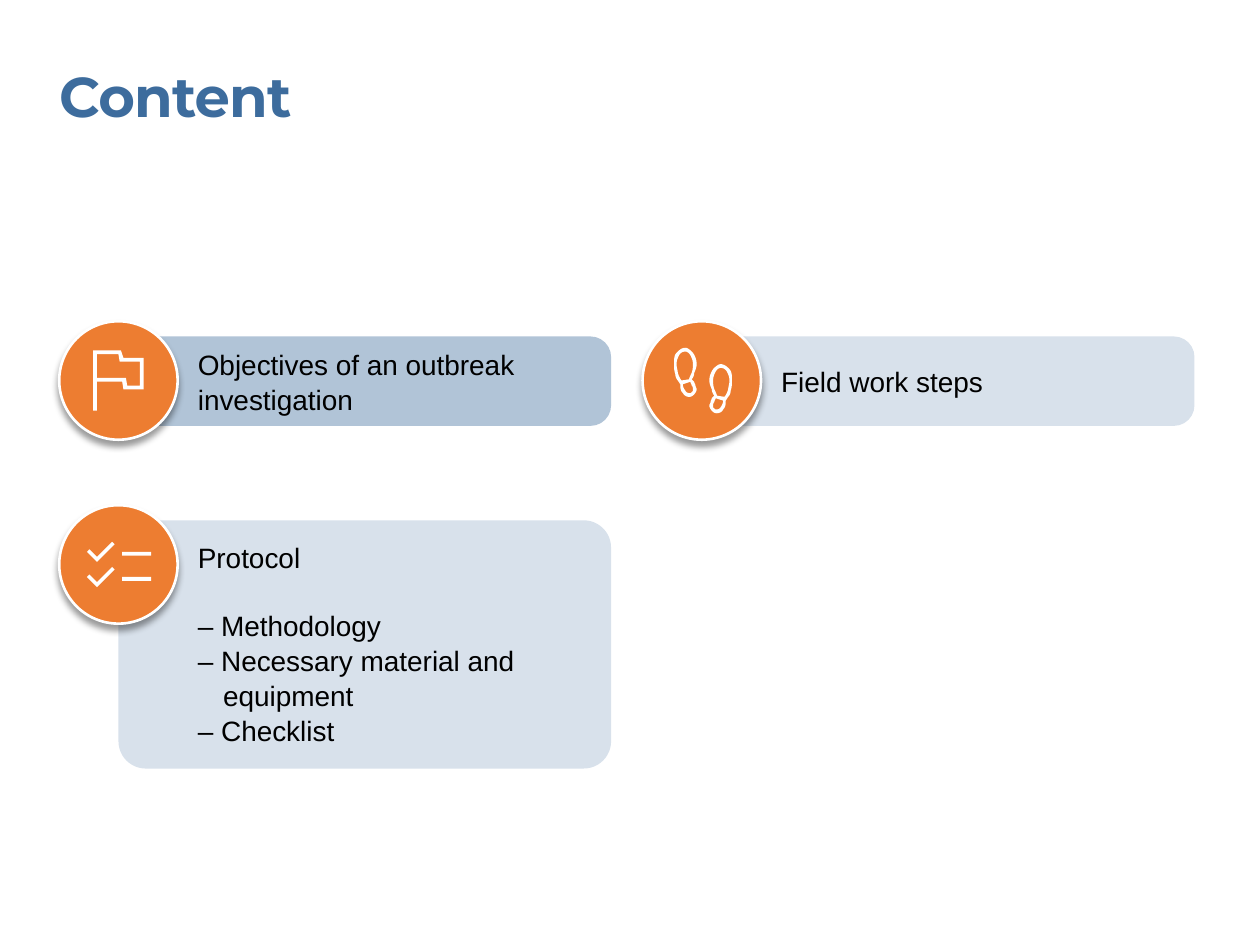
from lxml.etree import SubElement
from pptx import Presentation
from pptx.dml.color import RGBColor
from pptx.enum.shapes import MSO_SHAPE
from pptx.oxml.ns import qn
from pptx.util import Inches, Pt

BLUE, ORANGE, WHITE, BLACK = "3D6C9D", "ED7D31", "FFFFFF", "000000"
DISC = 0.94
FLAG = [
    [(0.74, 3.26), (0.74, 2.78), (0.96, 2.78), (0.98, 2.84), (1.14, 2.84), (1.14, 3.09),
     (0.98, 3.09), (0.97, 3.03), (0.77, 3.03), (0.77, 3.26)],
    [(1.01, 3.06), (1.11, 3.06), (1.11, 2.87), (0.95, 2.87), (0.94, 2.81), (0.77, 2.81),
     (0.77, 3), (1, 3)],
]
TICK = [(0.77, 4.46), (0.69, 4.38), (0.71, 4.36), (0.77, 4.42), (0.89, 4.3), (0.91, 4.32)]
DASH = [(0.97, 4.41), (0.97, 4.38), (1.2, 4.38), (1.2, 4.41)]
FOOT = [
    [(5.47, 3.15), (5.45, 3.15, 5.43, 3.14, 5.42, 3.12), (5.4, 3.1, 5.4, 3.08, 5.4, 3.05),
     (5.38, 3.02), (5.37, 3.01, 5.36, 2.99, 5.36, 2.97), (5.35, 2.94, 5.35, 2.92, 5.35, 2.89),
     (5.35, 2.85, 5.35, 2.82, 5.37, 2.8), (5.39, 2.78, 5.41, 2.76, 5.44, 2.76),
     (5.46, 2.76, 5.48, 2.78, 5.5, 2.8), (5.52, 2.83, 5.53, 2.86, 5.53, 2.89),
     (5.53, 2.91, 5.52, 2.94, 5.51, 2.96), (5.51, 2.98, 5.5, 3, 5.49, 3.01), (5.51, 3.03),
     (5.51, 3.04, 5.52, 3.05, 5.52, 3.06), (5.52, 3.07, 5.53, 3.08, 5.53, 3.09),
     (5.53, 3.1, 5.52, 3.12, 5.51, 3.13), (5.5, 3.14, 5.49, 3.15, 5.47, 3.15)],
    [(5.41, 3.02), (5.47, 3.01), (5.47, 3, 5.48, 2.98, 5.49, 2.96),
     (5.5, 2.93, 5.5, 2.91, 5.5, 2.89), (5.5, 2.86, 5.49, 2.84, 5.48, 2.82),
     (5.47, 2.8, 5.45, 2.79, 5.44, 2.79), (5.42, 2.79, 5.4, 2.8, 5.39, 2.82),
     (5.38, 2.84, 5.37, 2.86, 5.37, 2.89), (5.37, 2.92, 5.38, 2.94, 5.38, 2.96),
     (5.39, 2.99, 5.4, 3.01, 5.41, 3.02)],
    [(5.47, 3.12), (5.48, 3.12, 5.49, 3.12, 5.49, 3.11), (5.5, 3.11, 5.5, 3.1, 5.5, 3.09),
     (5.5, 3.08, 5.5, 3.07, 5.49, 3.06), (5.49, 3.05, 5.48, 3.04, 5.48, 3.03), (5.42, 3.05),
     (5.42, 3.07, 5.43, 3.09, 5.44, 3.1), (5.44, 3.11, 5.46, 3.12, 5.47, 3.12)],
]


def color(value):
    return RGBColor.from_string(value)


def flatten(contour, steps=6):
    """Turn a chain of lines and cubic curves into plain points."""
    points = [contour[0]]
    for part in contour[1:]:
        if len(part) == 2:
            points.append(part)
            continue
        start = points[-1]
        for step in range(1, steps + 1):
            t = step / steps
            u = 1 - t
            points.append(tuple(
                u**3 * start[axis] + 3 * u * u * t * part[axis]
                + 3 * u * t * t * part[axis + 2] + t**3 * part[axis + 4]
                for axis in (0, 1)))
    return points


def shift(contour, down):
    return [(x, y + down) for x, y in contour]


def mirror(contour, total, down):
    return [(total - x, y + down) for x, y in contour]


class Page:
    """Draws the elements of one slide in a shared style."""

    def __init__(self, page, font="Arial", size=16):
        self.shapes = page.shapes
        self.font = font
        self.size = size

    def paint(self, shape, fill):
        shape.shadow.inherit = False
        shape.fill.solid()
        shape.fill.fore_color.rgb = color(fill)
        shape.line.fill.background()

    def preset(self, kind, left, top, width, height, fill):
        shape = self.shapes.add_shape(
            kind, Inches(left), Inches(top), Inches(width), Inches(height))
        self.paint(shape, fill)
        return shape

    def bar(self, left, top, height, radius, alpha):
        box = self.preset(MSO_SHAPE.ROUNDED_RECTANGLE, left, top, 3.91, height, BLUE)
        box.adjustments[0] = radius
        tint = box._element.spPr.find(qn("a:solidFill")).find(qn("a:srgbClr"))
        SubElement(tint, qn("a:alpha"), val=str(alpha * 1000))

    def disc(self, left, top):
        circle = self.preset(MSO_SHAPE.OVAL, left, top, DISC, DISC, ORANGE)
        circle.line.color.rgb = color(WHITE)
        circle.line.width = Pt(1.5)
        effects = circle._element.spPr.find(qn("a:effectLst"))
        shadow = SubElement(effects, qn("a:outerShdw"), blurRad=str(Pt(4)), dist=str(Pt(3)),
                            dir="5400000", algn="t", rotWithShape="0")
        tint = SubElement(shadow, qn("a:srgbClr"), val=BLACK)
        SubElement(tint, qn("a:alpha"), val="40000")

    def text_frame(self, left, top, width, height):
        box = self.shapes.add_textbox(Inches(left), Inches(top), Inches(width), Inches(height))
        frame = box.text_frame
        frame.word_wrap = True
        frame.margin_left = frame.margin_top = frame.margin_right = frame.margin_bottom = 0
        return frame

    def add_span(self, para, text, tint=BLACK):
        span = para.add_run()
        span.text = text
        span.font.name = self.font
        span.font.size = Pt(self.size)
        span.font.color.rgb = color(tint)
        return span

    def title(self, text):
        span = self.add_span(self.text_frame(0.47, 0.49, 8.55, 0.54).paragraphs[0], text, BLUE)
        span.font.name = "Montserrat"
        span.font.size = Pt(32)
        span.font.bold = True
        span._r.get_or_add_rPr().set("spc", "-50")

    def label(self, left, top, height, heading, items):
        frame = self.text_frame(left, top, 3.01, height)
        para = frame.paragraphs[0]
        para.line_spacing = 1.04
        self.add_span(para, heading)
        if items:
            para.space_after = Pt(19)
        for item in items:
            para = frame.add_paragraph()
            para.line_spacing = 1.04
            properties = para._p.get_or_add_pPr()
            properties.set("marL", str(Inches(0.2)))
            properties.set("indent", str(Inches(-0.2)))
            self.add_span(para, f"– {item}")

    def card(self, left, top, height, radius, alpha, label_top, label_height, heading, items=()):
        self.bar(left + DISC / 2, top + 0.12, height, radius, alpha)
        self.label(left + 1.1, label_top, label_height, heading, items)
        self.disc(left, top)

    def icon(self, contours):
        outlines = [[(Inches(x), Inches(y)) for x, y in contour] for contour in contours]
        builder = self.shapes.build_freeform(*outlines[0][0])
        builder.add_line_segments(outlines[0][1:], close=True)
        for outline in outlines[1:]:
            builder.move_to(*outline[0])
            builder.add_line_segments(outline[1:], close=True)
        self.paint(builder.convert_to_shape(), WHITE)


def main():
    deck = Presentation()
    deck.slide_width, deck.slide_height = Inches(10), Inches(7.5)
    page = Page(deck.slides.add_slide(deck.slide_layouts[6]))
    page.title("Content")
    page.card(0.47, 2.55, 0.71, 0.23, 40, 2.75, 0.54, "Objectives of an outbreak investigation")
    page.card(5.1, 2.55, 0.71, 0.23, 20, 2.88, 0.27, "Field work steps")
    page.card(0.47, 4.01, 1.97, 0.11, 20, 4.28, 1.62, "Protocol",
              ("Methodology", "Necessary material and equipment", "Checklist"))
    page.icon(FLAG)
    page.icon([shift(mark, down) for mark in (TICK, DASH) for down in (0, 0.2)])
    left_foot = [flatten(contour) for contour in FOOT]
    page.icon(left_foot + [mirror(contour, 11.16, 0.13) for contour in left_foot])
    deck.save("out.pptx")


if __name__ == "__main__":
    main()
